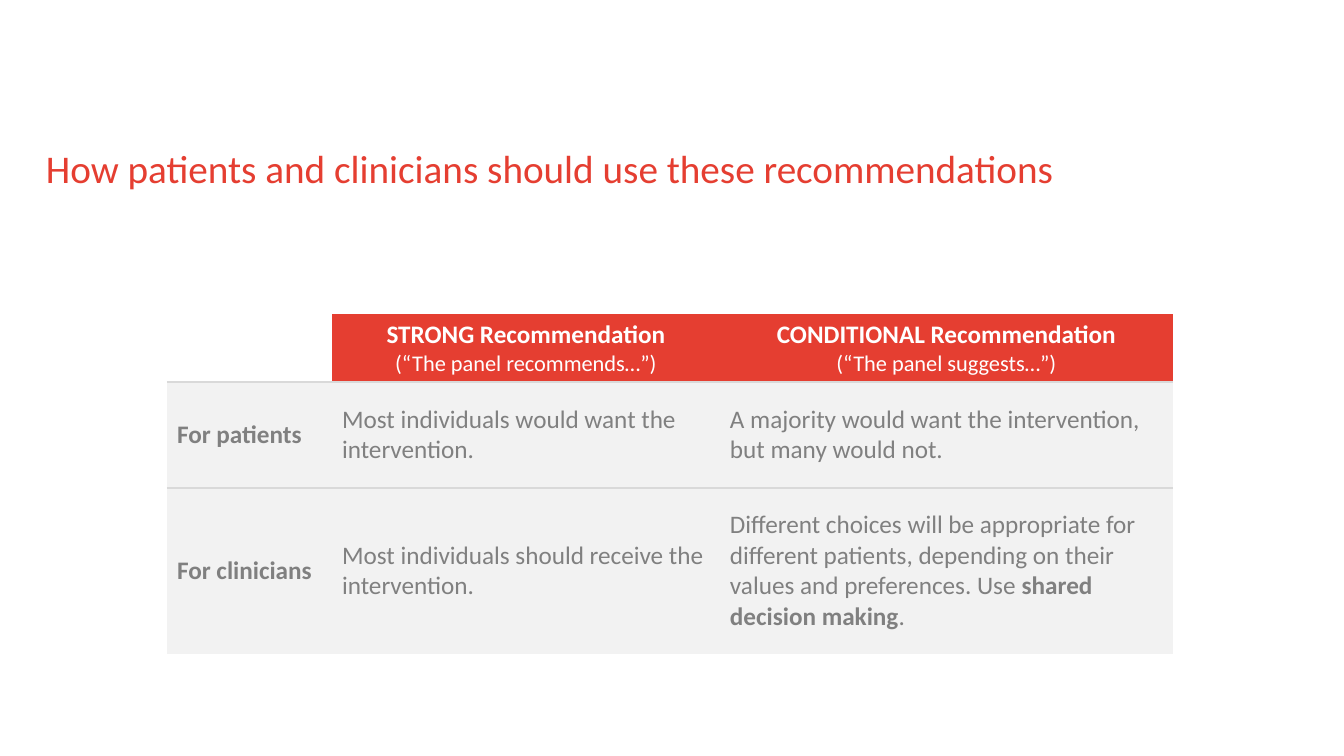
from dataclasses import dataclass

from lxml.etree import SubElement
from pptx import Presentation
from pptx.dml.color import RGBColor
from pptx.enum.text import MSO_ANCHOR as Anchor, PP_ALIGN as Align
from pptx.oxml.ns import qn
from pptx.util import Pt

PX = 914400 / 100.8
NO_TABLE_STYLE = "{2D5ABB26-0587-4C30-8999-92F81FD0307C}"


@dataclass(frozen=True)
class Theme:
    font: str = "Calibri"
    accent: str = "E53E31"
    header_text: str = "FFFFFF"
    body_text: str = "808080"
    body_fill: str = "F2F2F2"
    rule: str = "D9D9D9"
    title_size: int = 28
    body_size: int = 18
    note_size: int = 16


def px(length):
    return round(length * PX)


class SlideBuilder:
    def __init__(self, slide, theme):
        self.slide = slide
        self.theme = theme

    def style(self, run, size, color, bold=False):
        run.font.name = self.theme.font
        run.font.size = Pt(size)
        run.font.bold = bold
        run.font.color.rgb = RGBColor.from_string(color)

    def title(self, text, left, top, width, height):
        box = self.slide.shapes.add_textbox(px(left), px(top), px(width), px(height))
        frame = box.text_frame
        frame.word_wrap = True
        frame.vertical_anchor = Anchor.MIDDLE
        frame.margin_left = frame.margin_right = frame.margin_top = frame.margin_bottom = 0
        frame.text = text
        paragraph = frame.paragraphs[0]
        paragraph.line_spacing = 0.9
        self.style(paragraph.runs[0], self.theme.title_size, self.theme.accent)

    def table(self, left, top, column_widths, row_heights):
        shape = self.slide.shapes.add_table(
            len(row_heights), len(column_widths), px(left), px(top),
            px(sum(column_widths)), px(sum(row_heights)))
        table = shape.table
        table.first_row = table.horz_banding = False
        table._tbl.tblPr.find(qn("a:tableStyleId")).text = NO_TABLE_STYLE
        for column, width in zip(table.columns, column_widths):
            column.width = px(width)
        for row, height in zip(table.rows, row_heights):
            row.height = px(height)
        return table

    def header_cell(self, cell, heading, note):
        self.fill(cell, self.theme.accent)
        cell.text = f"{heading}\n{note}"
        heading_line, note_line = cell.text_frame.paragraphs
        for paragraph in (heading_line, note_line):
            paragraph.alignment = Align.CENTER
        self.style(heading_line.runs[0], self.theme.body_size, self.theme.header_text, True)
        self.style(note_line.runs[0], self.theme.note_size, self.theme.header_text)

    def body_cell(self, cell, parts, edges):
        for edge in edges:
            self.border(cell, edge)
        self.fill(cell, self.theme.body_fill)
        paragraph = cell.text_frame.paragraphs[0]
        for text, bold in parts:
            run = paragraph.add_run()
            run.text = text
            self.style(run, self.theme.body_size, self.theme.body_text, bold)

    def fill(self, cell, color):
        cell.vertical_anchor = Anchor.MIDDLE
        cell.fill.solid()
        cell.fill.fore_color.rgb = RGBColor.from_string(color)

    def border(self, cell, edge):
        properties = cell._tc.get_or_add_tcPr()
        line = SubElement(properties, qn(f"a:{edge}"), w=str(Pt(1)))
        solid = SubElement(line, qn("a:solidFill"))
        SubElement(solid, qn("a:srgbClr"), val=self.theme.rule)


HEADERS = [
    ("STRONG Recommendation", "(“The panel recommends…”)"),
    ("CONDITIONAL Recommendation", "(“The panel suggests…”)"),
]

# Each cell is a list of (text, bold) parts
BODY_ROWS = [
    [
        [("For patients", True)],
        [("Most individuals would want the intervention.", False)],
        [("A majority would want the intervention, but many would not.", False)],
    ],
    [
        [("For clinicians", True)],
        [("Most individuals should receive the intervention.", False)],
        [("Different choices will be appropriate for different patients, "
          "depending on their values and preferences. Use ", False),
         ("shared decision making", True),
         (".", False)],
    ],
]


def main():
    presentation = Presentation()
    presentation.slide_width, presentation.slide_height = px(1344), px(756)
    slide = presentation.slides.add_slide(presentation.slide_layouts[6])
    builder = SlideBuilder(slide, Theme())

    # Title
    builder.title("How patients and clinicians should use these recommendations",
                  46, 148, 1210, 46)

    # Recommendation table
    table = builder.table(167, 314, [165, 388, 453], [68, 106, 166])
    table.cell(0, 0).fill.background()
    for column, (heading, note) in enumerate(HEADERS, start=1):
        builder.header_cell(table.cell(0, column), heading, note)

    # Body rows, ruled above and between
    for row, cells in enumerate(BODY_ROWS, start=1):
        edges = ["lnT"] if row == len(BODY_ROWS) else ["lnT", "lnB"]
        for column, parts in enumerate(cells):
            builder.body_cell(table.cell(row, column), parts, edges)

    presentation.save("out.pptx")


if __name__ == "__main__":
    main()
